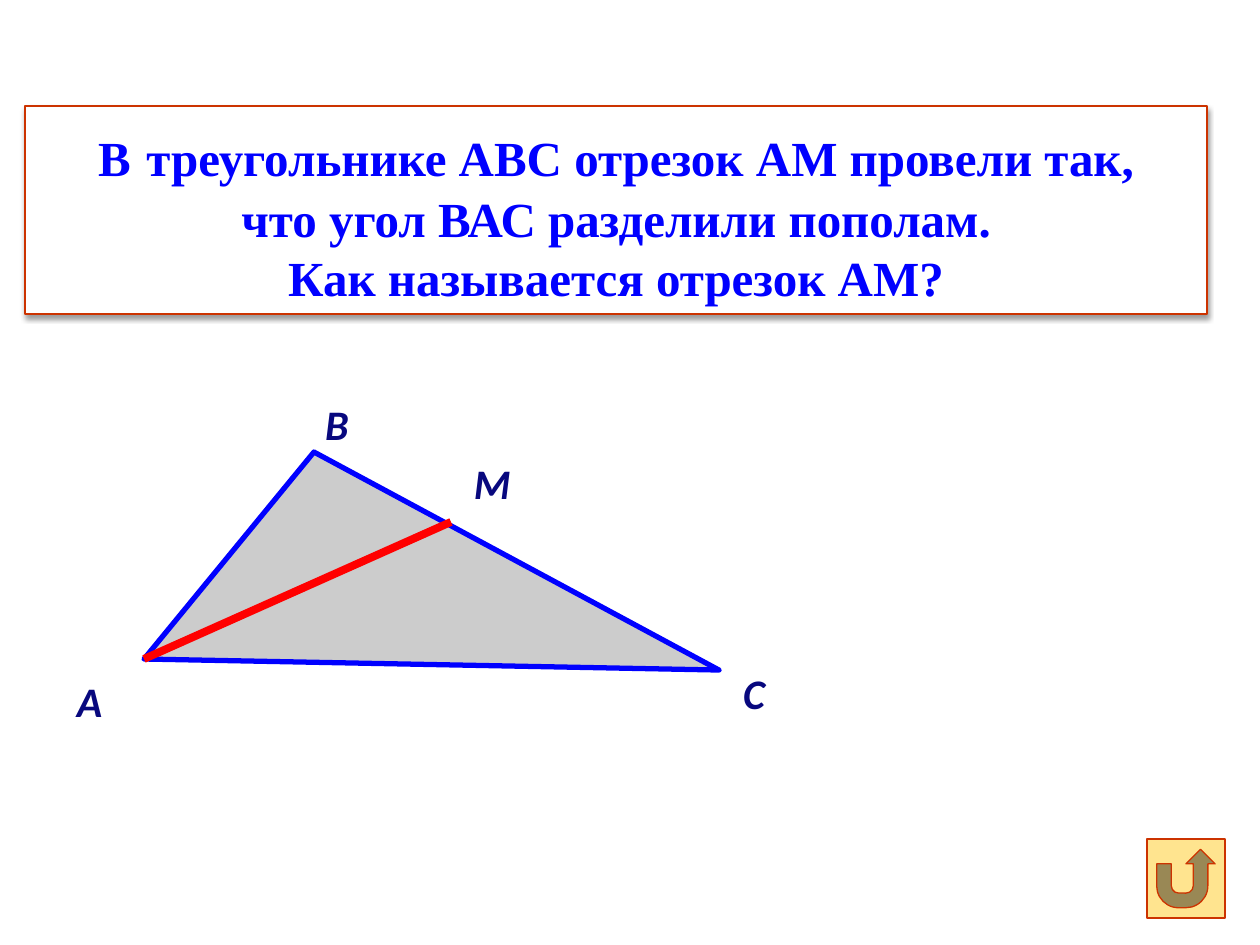
from typing import NamedTuple

from lxml import etree
from pptx import Presentation
from pptx import util as u
from pptx.dml.color import RGBColor
from pptx.enum import shapes, text
from pptx.oxml import parse_xml
from pptx.oxml.ns import nsdecls, qn

EMU_PER_PX = 914400 / 126
COLORS = {
    "background": "FFFFFF",
    "frame": "CC3300",
    "question": "0000FF",
    "triangle": "CCCCCC",
    "side": "0000FF",
    "bisector": "FF0000",
    "label": "08087E",
    "button": "FFE48F",
}


class Point(NamedTuple):
    x: int
    y: int


class Box(NamedTuple):
    left: int
    top: int
    width: int
    height: int


class Label(NamedTuple):
    caption: str
    corner: Point


QUESTION_BOX = Box(25, 106, 1182, 208)
BUTTON_BOX = Box(1147, 839, 78, 79)
LABEL_SIZE = (69, 64)
A, B, C, M = Point(144, 659), Point(314, 452), Point(719, 670), Point(451, 522)
LABELS = [
    Label("В", Point(312, 393)),
    Label("А", Point(64, 670)),
    Label("С", Point(730, 662)),
    Label("М", Point(461, 452)),
]
QUESTION_END = [
    "что угол ВАС разделили пополам.",
    "Как называется отрезок АM?",
]


def px(length: int) -> u.Emu:
    return u.Emu(round(length * EMU_PER_PX))


def color(name: str) -> RGBColor:
    return RGBColor.from_string(COLORS[name])


def set_line(shape, name: str, width: float) -> None:
    shape.line.color.rgb = color(name)
    shape.line.width = u.Pt(width)


def set_fill(shape, name: str) -> None:
    shape.fill.solid()
    shape.fill.fore_color.rgb = color(name)


def set_frame(frame, horizontal: int, vertical: int, anchor) -> None:
    frame.word_wrap = True
    frame.auto_size = text.MSO_AUTO_SIZE.NONE
    frame.vertical_anchor = anchor
    frame.margin_left = frame.margin_right = px(horizontal)
    frame.margin_top = frame.margin_bottom = px(vertical)


def add_run(paragraph, content: str, *, size: int, name: str, font: str,
            italic: bool = False) -> None:
    run = paragraph.add_run()
    run.text = content
    run.font.size = u.Pt(size)
    run.font.name = font
    run.font.bold = True
    run.font.italic = italic
    run.font.color.rgb = color(name)


def add_drop_shadow(shape) -> None:
    shape._element.spPr.append(parse_xml(
        f'<a:effectLst {nsdecls("a")}>'
        '<a:outerShdw blurRad="39370" dist="20320" dir="5400000" rotWithShape="0">'
        '<a:srgbClr val="000000"><a:alpha val="38000"/></a:srgbClr>'
        '</a:outerShdw></a:effectLst>'))


def add_question(slide) -> None:
    title = slide.shapes.title
    title.left, title.top, title.width, title.height = map(px, QUESTION_BOX)
    set_fill(title, "background")
    set_line(title, "frame", 1.5)
    add_drop_shadow(title)
    frame = title.text_frame
    set_frame(frame, 14, 8, text.MSO_ANCHOR.MIDDLE)
    style = {"name": "question", "font": "Times New Roman"}
    first = frame.paragraphs[0]
    add_run(first, "В", size=28, **style)
    add_run(first, " ", size=36, **style)
    add_run(first, "треугольнике АВС отрезок АM провели так,", size=28, **style)
    for line in QUESTION_END:
        add_run(frame.add_paragraph(), line, size=28, **style)
    for paragraph in frame.paragraphs:
        paragraph.alignment = text.PP_ALIGN.CENTER


def add_triangle(slide, *corners: Point) -> None:
    builder = slide.shapes.build_freeform(*corners[0], scale=EMU_PER_PX)
    builder.add_line_segments(corners[1:], close=True)
    triangle = builder.convert_to_shape()
    triangle.shadow.inherit = False
    set_fill(triangle, "triangle")
    set_line(triangle, "side", 3)


def add_label(slide, label: Label) -> None:
    box = slide.shapes.add_textbox(*map(px, (*label.corner, *LABEL_SIZE)))
    set_frame(box.text_frame, 13, 6, text.MSO_ANCHOR.TOP)
    add_run(box.text_frame.paragraphs[0], label.caption, size=24,
            name="label", font="Calibri", italic=True)


def add_segment(slide, start: Point, end: Point) -> None:
    segment = slide.shapes.add_connector(
        shapes.MSO_CONNECTOR.STRAIGHT, *map(px, (*start, *end)))
    set_line(segment, "bisector", 4.5)
    etree.SubElement(segment._element.spPr, qn("a:effectLst"))


def add_return_button(slide) -> None:
    button = slide.shapes.add_shape(
        shapes.MSO_SHAPE.ACTION_BUTTON_RETURN, *map(px, BUTTON_BOX))
    button.shadow.inherit = False
    set_fill(button, "button")
    set_line(button, "frame", 0.75)


def main() -> None:
    presentation = Presentation()
    presentation.slide_width, presentation.slide_height = px(1260), px(945)
    title_only = presentation.slide_layouts[5]
    slide = presentation.slides.add_slide(title_only)
    add_question(slide)
    add_triangle(slide, A, B, C)
    for label in LABELS:
        add_label(slide, label)
    add_segment(slide, M, A)
    add_return_button(slide)
    presentation.save("out.pptx")


if __name__ == "__main__":
    main()
